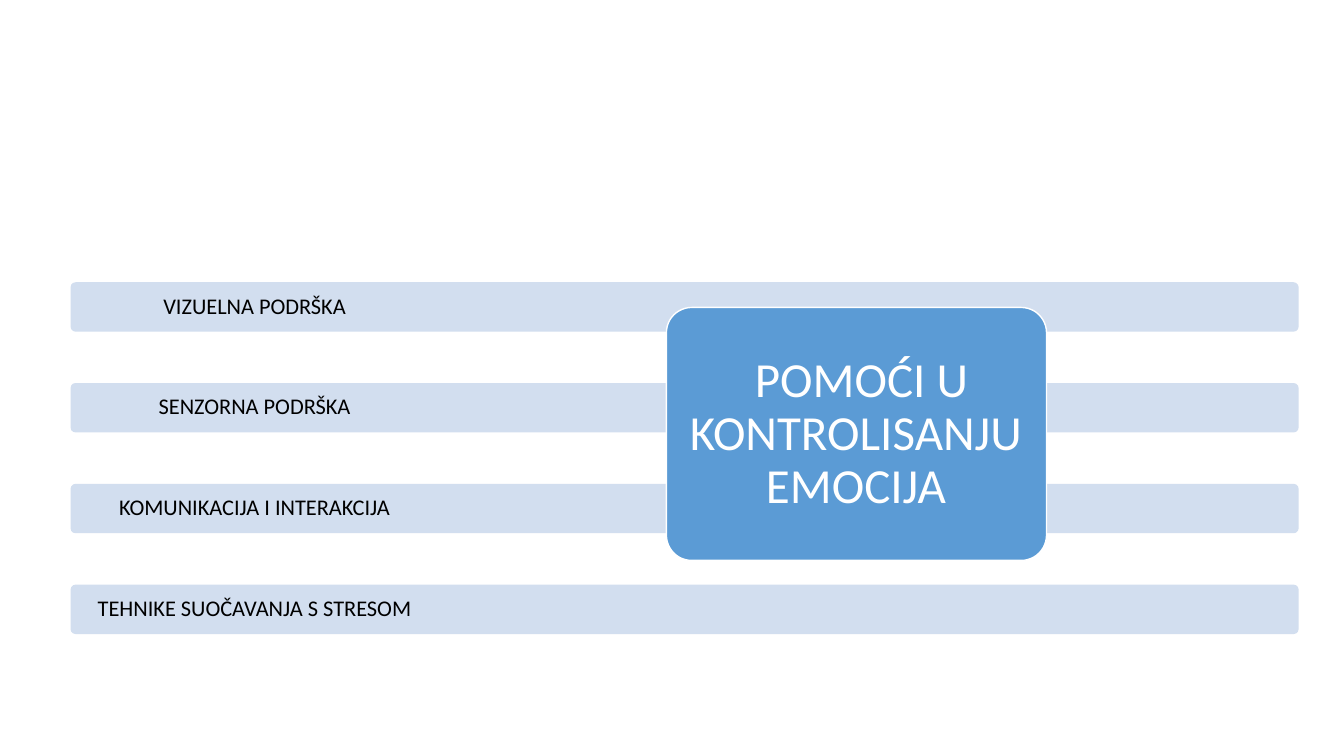
from pptx import Presentation
from pptx.dml.color import RGBColor
from pptx.enum.shapes import MSO_SHAPE
from pptx.enum.text import MSO_ANCHOR, PP_ALIGN
from pptx.util import Inches, Pt

ROUNDED = MSO_SHAPE.ROUNDED_RECTANGLE
MIDDLE = MSO_ANCHOR.MIDDLE
CENTER = PP_ALIGN.CENTER

PALE_BLUE = RGBColor(0xD2, 0xDE, 0xEF)
BLUE = RGBColor(0x5B, 0x9B, 0xD5)
WHITE = RGBColor(0xFF, 0xFF, 0xFF)
BLACK = RGBColor(0x00, 0x00, 0x00)

SUPPORTS = [
    "VIZUELNA PODRŠKA",
    "SENZORNA PODRŠKA",
    "KOMUNIKACIJA I INTERAKCIJA",
    "TEHNIKE SUOČAVANJA S STRESOM",
]
BAR_LEFT, BAR_TOP, BAR_STEP = 0.7, 2.8, 1.0
BAR_WIDTH, BAR_HEIGHT, LABEL_WIDTH = 12.18, 0.49, 3.65


def add_panel(page, left, top, width, height, fill):
    panel = page.shapes.add_shape(
        ROUNDED, Inches(left), Inches(top), Inches(width), Inches(height))
    panel.adjustments[0] = 0.1
    panel.shadow.inherit = False
    panel.fill.solid()
    panel.fill.fore_color.rgb = fill
    panel.line.fill.background()
    return panel


def add_label(page, left, top, width, height, text, size, color, inset):
    box = page.shapes.add_textbox(
        Inches(left), Inches(top), Inches(width), Inches(height))
    frame = box.text_frame
    frame.word_wrap = True
    frame.vertical_anchor = MIDDLE
    frame.margin_left = frame.margin_right = Inches(inset)
    frame.margin_top = frame.margin_bottom = Inches(inset)
    frame.text = text
    para = frame.paragraphs[0]
    para.alignment = CENTER
    para.line_spacing = 0.9
    para.font.name = "Calibri"
    para.font.size = Pt(size)
    para.font.color.rgb = color


deck = Presentation()
deck.slide_width = Inches(13.33)
deck.slide_height = Inches(7.5)
page = deck.slides.add_slide(deck.slide_layouts[6])

for row, support in enumerate(SUPPORTS):
    top = BAR_TOP + row * BAR_STEP
    add_panel(page, BAR_LEFT, top, BAR_WIDTH, BAR_HEIGHT, PALE_BLUE)
    add_label(page, BAR_LEFT, top, LABEL_WIDTH, BAR_HEIGHT, support, 16, BLACK, 0.12)

topic = add_panel(page, 6.61, 3.05, 3.77, 2.51, BLUE)
topic.line.color.rgb = WHITE
topic.line.width = Pt(1)
add_label(page, 6.68, 3.13, 3.62, 2.37,
          " POMOĆI U KONTROLISANJU EMOCIJA", 35, WHITE, 0.15)

deck.save("out.pptx")
